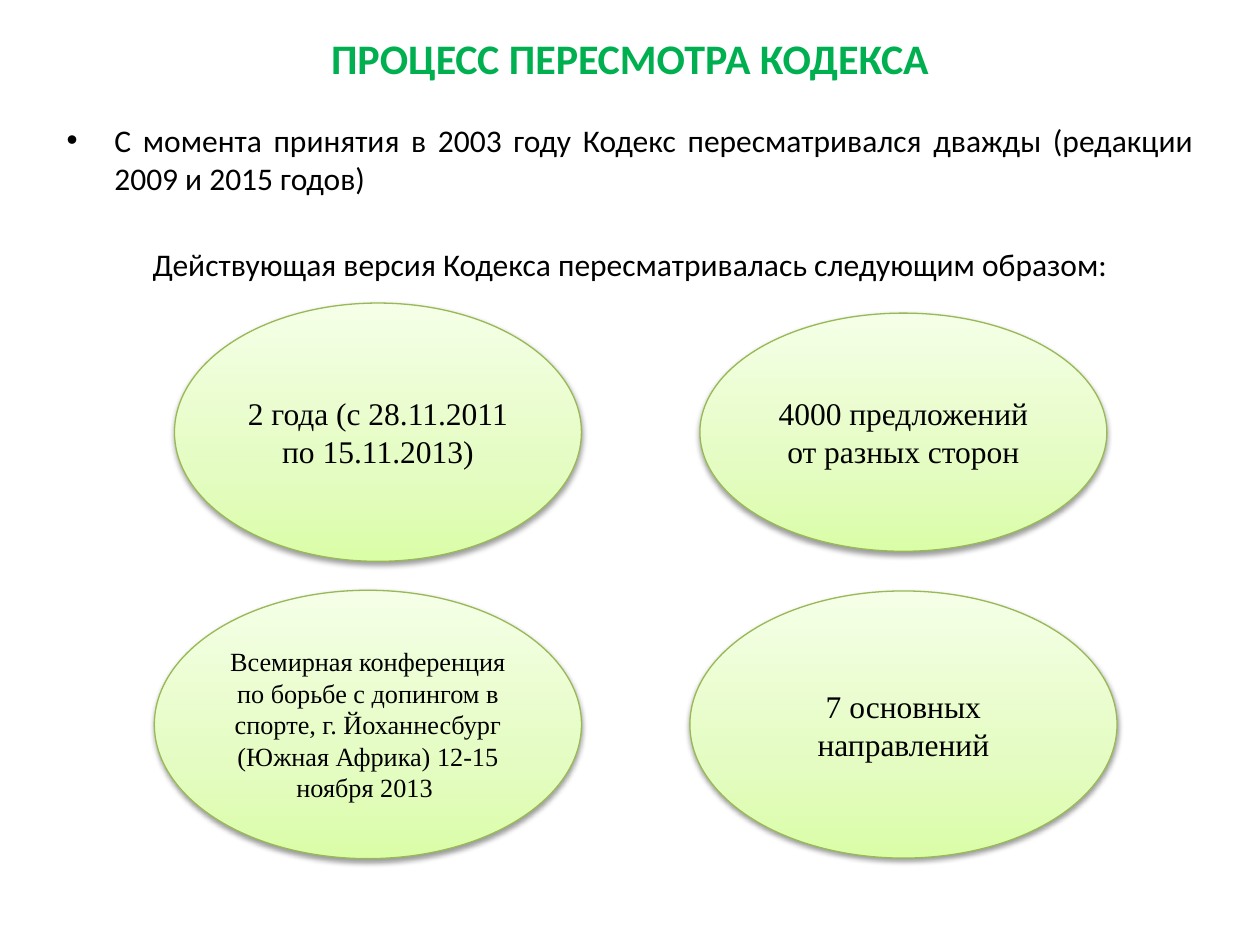
from copy import deepcopy
from dataclasses import dataclass

from lxml import etree
from pptx import Presentation
from pptx import util as u
from pptx.dml.color import RGBColor
from pptx.enum import shapes, text
from pptx.oxml.ns import qn


# Colours, fonts and type sizes
@dataclass(frozen=True)
class Theme:
    title: str = "00B050"
    ink: str = "000000"
    outline: str = "98B955"
    gradient: tuple = ((0, "DAFDA7"), (0.35, "E4FCC2"), (1, "F5FFE7"))
    sans: str = "Calibri"
    serif: str = "Times New Roman"
    title_size: int = 24
    body_size: int = 18
    small_size: int = 15


THEME = Theme()


@dataclass(frozen=True)
class Oval:
    center_x: float
    center_y: float
    width: float
    height: float
    words: str
    size: int = THEME.body_size


OVALS = (
    Oval(3, 3.43, 3.23, 2.05, "2 года (с 28.11.2011 по 15.11.2013)"),
    Oval(2.92, 5.75, 3.39, 2.13,
         "Всемирная конференция по борьбе с допингом в спорте, "
         "г. Йоханнесбург (Южная Африка) 12-15 ноября 2013 ", THEME.small_size),
    Oval(7.17, 3.43, 3.23, 1.89, "4000 предложений от разных сторон"),
    Oval(7.17, 5.75, 3.39, 2.12, "7 основных направлений"),
)


def write(para, words: str, align, color: str = THEME.ink, **formats) -> None:
    """Fill a paragraph with one formatted span."""
    para.alignment = align
    span = para.add_run()
    span.text = words
    span.font.color.rgb = RGBColor.from_string(color)
    for name, value in formats.items():
        setattr(span.font, name, value)


def add_text_box(page, left: float, top: float, width: float, height: float):
    box = page.shapes.add_textbox(*map(u.Inches, (left, top, width, height)))
    box.text_frame.word_wrap = True
    return box.text_frame


def add_bullet(para, indent: float) -> None:
    props = para._p.get_or_add_pPr()
    props.set("marL", str(u.Inches(indent)))
    props.set("indent", str(-u.Inches(indent)))
    etree.SubElement(props, qn("a:buFont"), typeface="Arial")
    etree.SubElement(props, qn("a:buChar"), char="•")


def fill_gradient(shape) -> None:
    """Blend the theme's three greens from bottom to top."""
    shape.fill.gradient()
    shape.fill.gradient_angle = 90
    stop_list = shape._element.spPr.find(".//" + qn("a:gsLst"))
    stop_list.insert(1, deepcopy(stop_list[0]))
    for stop, (position, color) in zip(shape.fill.gradient_stops, THEME.gradient):
        stop.position = position
        stop.color.rgb = RGBColor.from_string(color)


def add_shadow(shape) -> None:
    shape.shadow.inherit = False
    effects = shape._element.spPr.find(qn("a:effectLst"))
    shadow = etree.SubElement(
        effects, qn("a:outerShdw"), blurRad=str(u.Pt(3.1)), dist=str(u.Pt(1.6)),
        dir="5400000", rotWithShape="0")
    color = etree.SubElement(shadow, qn("a:srgbClr"), val=THEME.ink)
    etree.SubElement(color, qn("a:alpha"), val="38000")


def add_oval(page, oval: Oval) -> None:
    shape = page.shapes.add_shape(
        shapes.MSO_SHAPE.OVAL,
        u.Inches(oval.center_x - oval.width / 2),
        u.Inches(oval.center_y - oval.height / 2),
        u.Inches(oval.width), u.Inches(oval.height))
    fill_gradient(shape)
    shape.line.color.rgb = RGBColor.from_string(THEME.outline)
    shape.line.width = u.Pt(0.75)
    add_shadow(shape)
    frame = shape.text_frame
    frame.word_wrap = True
    frame.vertical_anchor = text.MSO_ANCHOR.MIDDLE
    write(frame.paragraphs[0], oval.words, text.PP_ALIGN.CENTER,
          name=THEME.serif, size=u.Pt(oval.size))


def main() -> None:
    deck = Presentation()
    deck.slide_width, deck.slide_height = u.Inches(10), u.Inches(7.5)
    page = deck.slides.add_slide(deck.slide_layouts[6])

    # Title
    title = add_text_box(page, 0, 0.21, 10, 0.99)
    write(title.paragraphs[0], "ПРОЦЕСС ПЕРЕСМОТРА КОДЕКСА", text.PP_ALIGN.CENTER,
          THEME.title, name=THEME.sans, size=u.Pt(THEME.title_size), bold=True)

    # Bullet and lead-in line
    body = add_text_box(page, 0.43, 0.91, 9.14, 4.72)
    body_font = {"name": THEME.sans, "size": u.Pt(THEME.body_size)}
    bullet = body.paragraphs[0]
    write(bullet, "С момента принятия в 2003 году Кодекс пересматривался дважды "
          "(редакции 2009 и 2015 годов)", text.PP_ALIGN.JUSTIFY, **body_font)
    add_bullet(bullet, 0.38)
    lead = body.add_paragraph()
    lead.space_before = u.Pt(28)
    write(lead, "Действующая версия Кодекса пересматривалась следующим образом:",
          text.PP_ALIGN.CENTER, **body_font)

    # Facts about the revision
    for oval in OVALS:
        add_oval(page, oval)

    deck.save("out.pptx")


if __name__ == "__main__":
    main()
